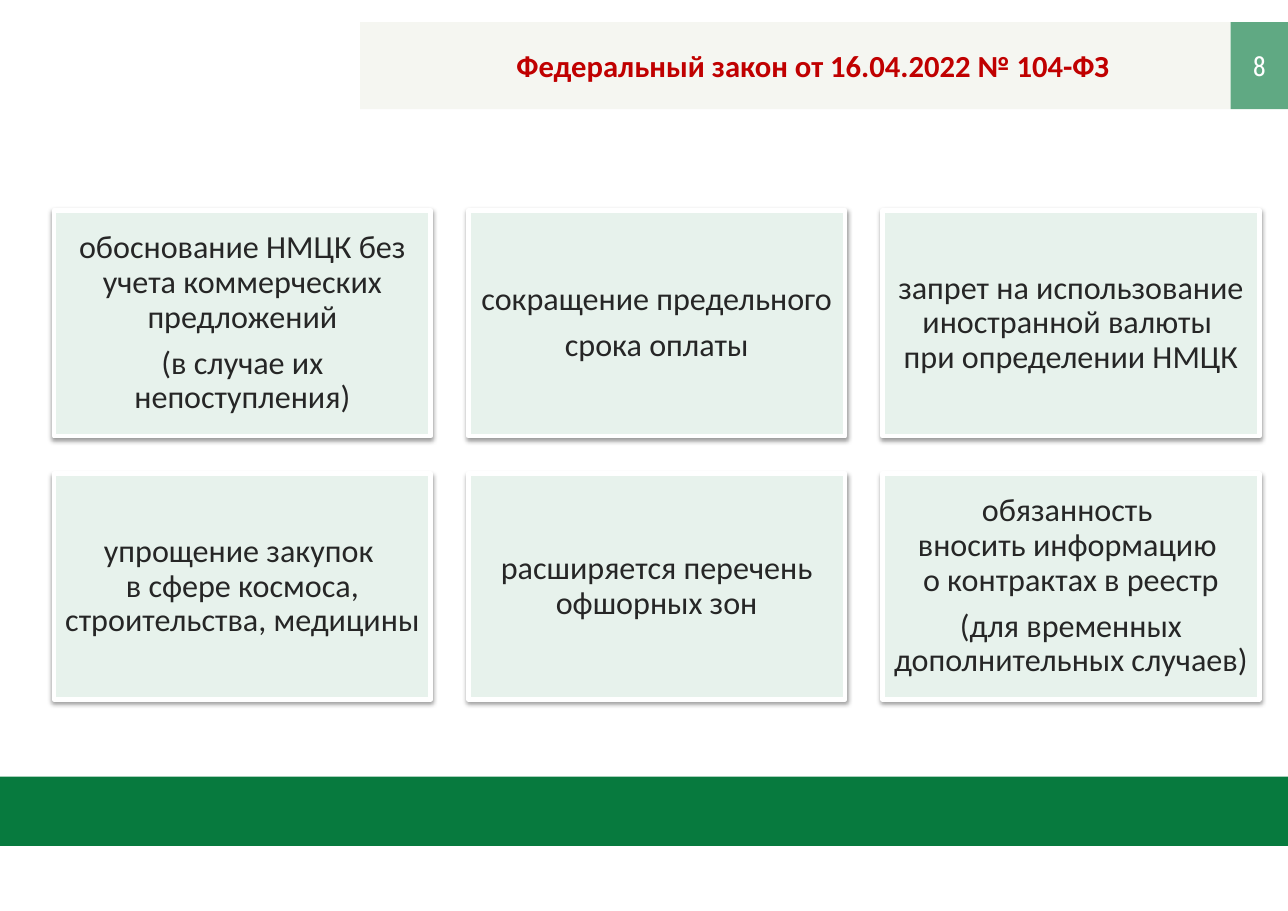
from lxml import etree
from pptx import Presentation
from pptx.dml.color import RGBColor
from pptx.enum.shapes import MSO_SHAPE
from pptx.enum.text import MSO_ANCHOR, PP_ALIGN
from pptx.oxml import parse_xml
from pptx.oxml.ns import nsdecls, qn
from pptx.util import Inches, Pt

COLORS = {
    "header": "F5F6F1",
    "title": "C00000",
    "green": "077A3E",
    "card": "E7F2EC",
    "text": "262626",
    "white": "FFFFFF",
}
CARD_SHADOW = (
    f'<a:effectLst {nsdecls("a")}>'
    '<a:outerShdw blurRad="39370" dist="20320" dir="5400000" rotWithShape="0">'
    '<a:srgbClr val="000000"><a:alpha val="38000"/></a:srgbClr>'
    "</a:outerShdw></a:effectLst>"
)
# "\n" starts a paragraph, "\v" breaks a line
CARD_TEXTS = [
    "обоснование НМЦК без учета коммерческих предложений\n(в случае их непоступления)",
    "сокращение предельного\nсрока оплаты",
    "запрет на использование иностранной валюты \vпри определении НМЦК",
    "упрощение закупок \vв сфере космоса, строительства, медицины",
    "расширяется перечень офшорных зон",
    "обязанность \vвносить информацию \vо контрактах в реестр\n"
    "(для временных дополнительных случаев)",
]
COLUMNS = 3

deck = Presentation()
deck.slide_width, deck.slide_height = Inches(11.69), Inches(8.27)
page = deck.slides.add_slide(deck.slide_layouts[6])


def add_rectangle(left, top, width, height, color):
    box = page.shapes.add_shape(
        MSO_SHAPE.RECTANGLE, Inches(left), Inches(top), Inches(width), Inches(height)
    )
    box.shadow.inherit = False
    box.fill.solid()
    box.fill.fore_color.rgb = RGBColor.from_string(COLORS[color])
    box.line.fill.background()
    return box


def write_centered(box, text, font_name, size, color, bold=False):
    frame = box.text_frame
    frame.word_wrap = True
    frame.vertical_anchor = MSO_ANCHOR.MIDDLE
    frame.text = text
    for para in frame.paragraphs:
        para.alignment = PP_ALIGN.CENTER
        for span in para.runs:
            span.font.name = font_name
            span.font.size = Pt(size)
            span.font.bold = bold
            span.font.color.rgb = RGBColor.from_string(COLORS[color])


# Header with title and page number
add_rectangle(3.27, 0.2, 7.9, 0.79, "header")
title = page.shapes.add_textbox(Inches(3.59), Inches(0.37), Inches(7.58), Inches(0.44))
write_centered(
    title, "Федеральный закон от 16.04.2022 № 104-ФЗ", "Calibri", 20, "title", bold=True
)
number = add_rectangle(11.17, 0.2, 0.52, 0.79, "green")
number_color = number.fill._xPr.find(qn("a:solidFill"))[0]
etree.SubElement(number_color, qn("a:alpha")).set("val", "64000")
write_centered(number, "8", "Roboto Condensed", 18, "white")

# Footer band
add_rectangle(0, 7.05, 11.69, 0.63, "green")

# Grid of cards
for index, text in enumerate(CARD_TEXTS):
    row, column = divmod(index, COLUMNS)
    card = add_rectangle(0.49 + column * 3.76, 1.91 + row * 2.39, 3.42, 2.05, "card")
    card.line.color.rgb = RGBColor.from_string(COLORS["white"])
    card.line.width = Pt(3)
    properties = card._element.spPr
    properties.replace(properties.find(qn("a:effectLst")), parse_xml(CARD_SHADOW))

    write_centered(card, text, "Calibri", 21, "text")
    frame = card.text_frame
    frame.margin_left = frame.margin_right = Inches(0.09)
    frame.margin_top = frame.margin_bottom = Inches(0.09)
    for position, para in enumerate(frame.paragraphs):
        para.line_spacing = 0.9
        if position:
            para.space_before = Pt(7.35)

deck.save("out.pptx")
